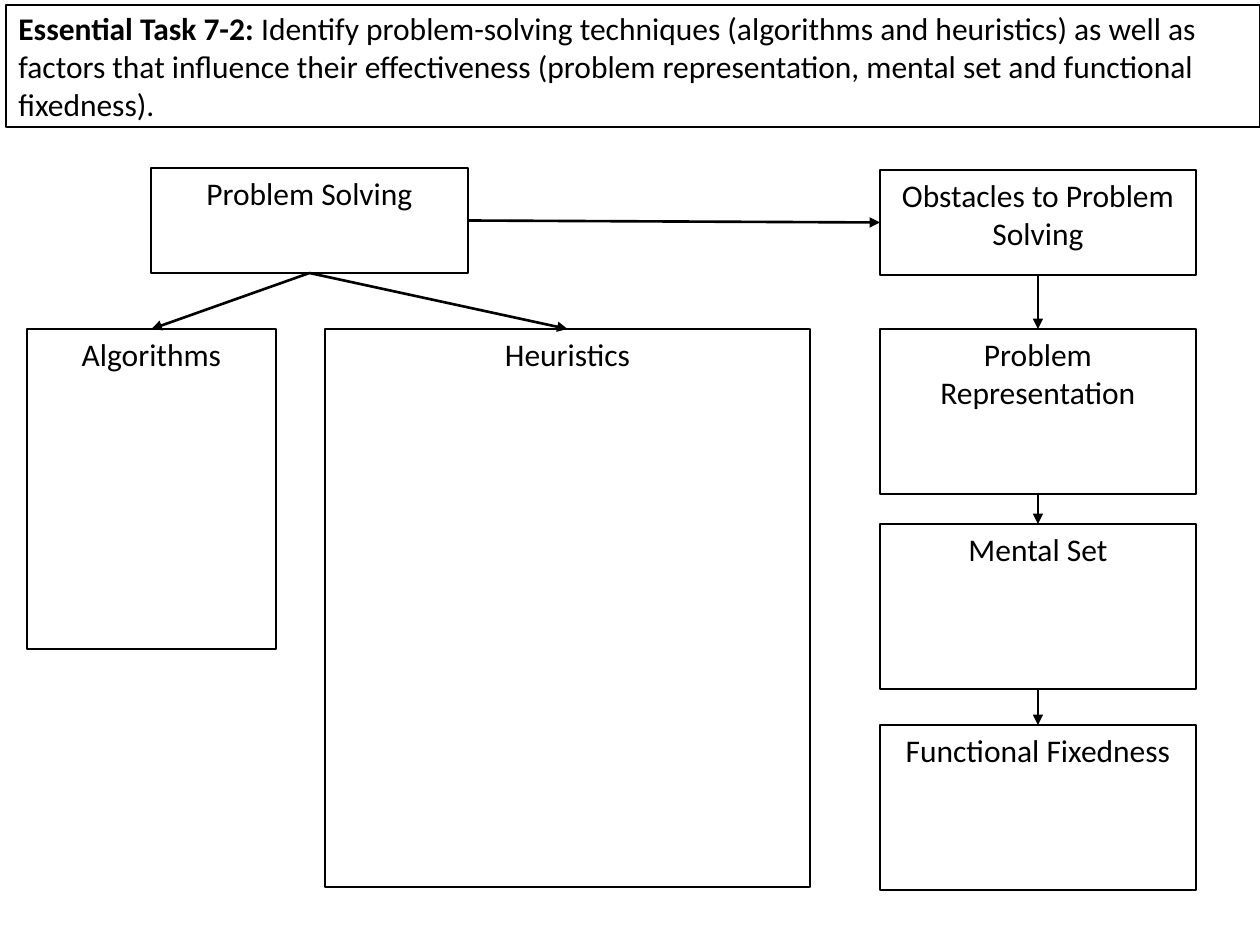
from lxml import etree
from pptx import Presentation
from pptx import util as u
from pptx.dml.color import RGBColor
from pptx.enum import shapes, text
from pptx.oxml.ns import qn

PX = u.Inches(1) / 126
COLORS = {"paper": "FFFFFF", "ink": "000000"}
FONT = "Calibri"
TOP, LEFT, BOTTOM, RIGHT = range(4)  # connection sites of a rectangle


def px(n):
    return u.Emu(round(n * PX))


def color(name):
    return RGBColor.from_string(COLORS[name])


def add_box(slide, area, parts, align=text.PP_ALIGN.CENTER, anchor=text.MSO_ANCHOR.TOP):
    """Outlined box; parts are (words, bold) pairs on one paragraph."""
    box = slide.shapes.add_shape(shapes.MSO_SHAPE.RECTANGLE, *map(px, area))
    box.shadow.inherit = False
    box.fill.solid()
    box.fill.fore_color.rgb = color("paper")
    box.line.color.rgb = color("ink")
    box.line.width = u.Pt(1)
    frame = box.text_frame
    frame.word_wrap = True
    frame.vertical_anchor = anchor
    paragraph = frame.paragraphs[0]
    paragraph.alignment = align
    for words, bold in parts:
        run = paragraph.add_run()
        run.text = words
        run.font.name = FONT
        run.font.size = u.Pt(18)
        run.font.bold = bold
        run.font.color.rgb = color("ink")
    return box


def add_arrow(slide, start, start_site, end, end_site):
    """Straight arrow glued to a side of each box."""
    arrow = slide.shapes.add_connector(shapes.MSO_CONNECTOR.STRAIGHT, 0, 0, 0, 0)
    arrow.begin_connect(start, start_site)
    arrow.end_connect(end, end_site)
    arrow.line.color.rgb = color("ink")
    arrow.line.width = u.Pt(1.5)
    etree.SubElement(arrow.line._get_or_add_ln(), qn("a:tailEnd"), type="triangle")
    etree.SubElement(arrow._element.spPr, qn("a:effectLst"))


def main():
    prs = Presentation()
    prs.slide_width, prs.slide_height = px(1260), px(945)
    slide = prs.slides.add_slide(prs.slide_layouts[6])

    # Task statement
    add_box(slide, (6, 5, 1254, 122), [
        ("Essential Task 7-2: ", True),
        ("Identify problem-solving techniques (algorithms and heuristics) as well as "
         "factors that influence their effectiveness (problem representation, "
         "mental set and functional fixedness).", False),
    ], text.PP_ALIGN.LEFT, text.MSO_ANCHOR.MIDDLE)

    # Concept boxes
    areas = {
        "Problem Solving": (151, 168, 317, 105),
        "Obstacles to Problem Solving": (880, 170, 316, 105),
        "Algorithms": (27, 329, 249, 320),
        "Heuristics": (325, 329, 485, 558),
        "Problem Representation": (880, 329, 316, 165),
        "Mental Set": (880, 524, 316, 165),
        "Functional Fixedness": (880, 725, 316, 165),
    }
    boxes = [add_box(slide, area, [(label, False)]) for label, area in areas.items()]
    solving, obstacles, algorithms, heuristics, *factors = boxes

    # Problem solving leads to its techniques and its obstacles
    add_arrow(slide, solving, RIGHT, obstacles, LEFT)
    for technique in (algorithms, heuristics):
        add_arrow(slide, solving, BOTTOM, technique, TOP)

    # Chain of obstacles
    for upper, lower in zip([obstacles, *factors], factors):
        add_arrow(slide, upper, BOTTOM, lower, TOP)

    prs.save("out.pptx")


if __name__ == "__main__":
    main()
